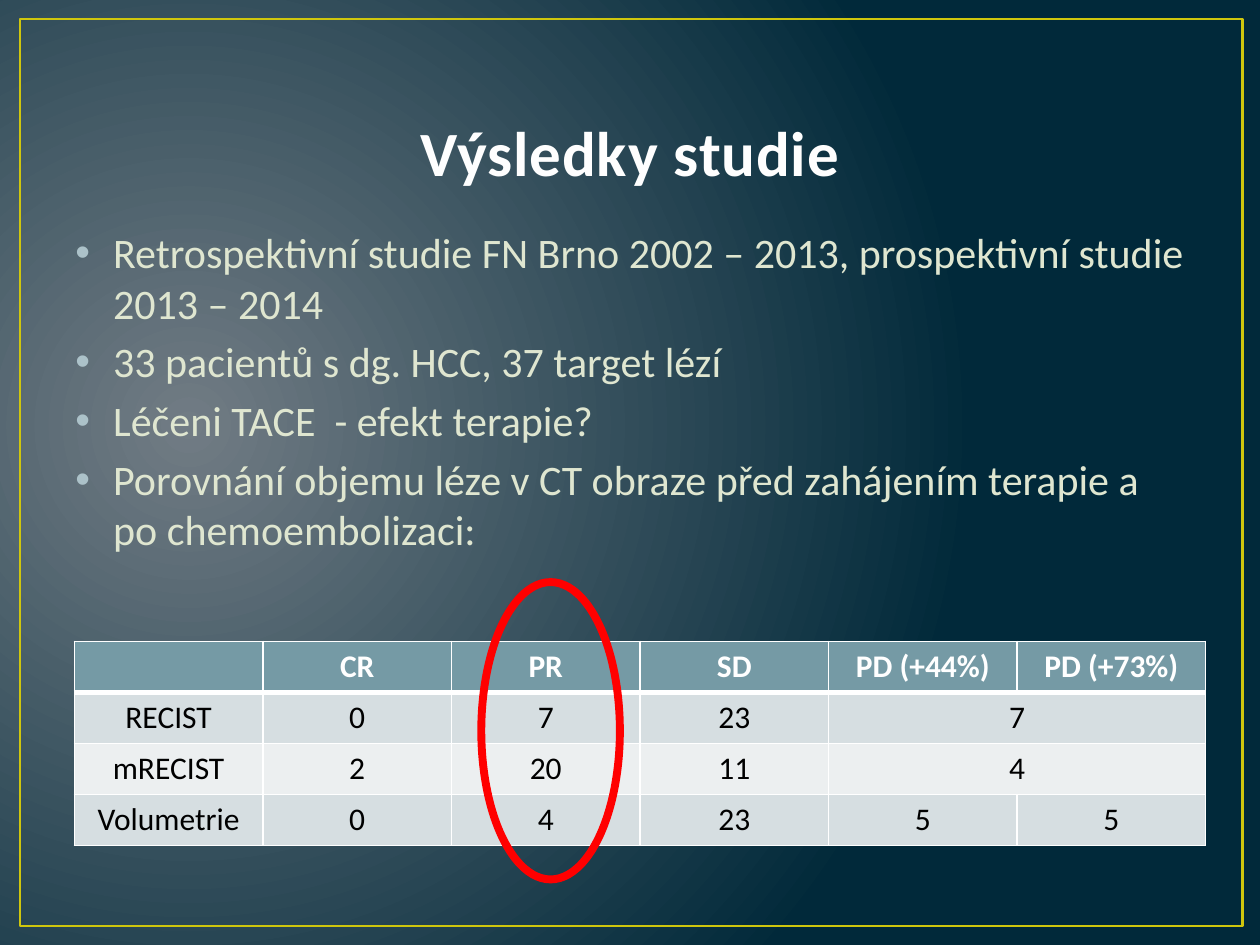
"""Build the study results slide: bullets, response table and a highlighted column."""
import pptx
import pptx.dml.color
import pptx.enum.shapes
import pptx.enum.text
import pptx.oxml
import pptx.oxml.ns
import pptx.util

TITLE = "Výsledky studie"
BULLETS = [
    "Retrospektivní studie FN Brno 2002 – 2013, prospektivní studie 2013 – 2014",
    "33 pacientů s dg. HCC, 37 target lézí",
    "Léčeni TACE  - efekt terapie?",
    "Porovnání objemu léze v CT obraze před zahájením terapie a po chemoembolizaci:",
]
RESPONSES = [
    ["", "CR", "PR", "SD", "PD (+44%)", "PD (+73%)"],
    ["RECIST", "0", "7", "23", "7", None],
    ["mRECIST", "2", "20", "11", "4", None],
    ["Volumetrie", "0", "4", "23", "5", "5"],
]
THEME = {
    "font": "Calibri",
    "glow": "717C84", "night": "01293A", "frame": "CFC60D",
    "title": "FEFEFE", "title_edge": "384F55",
    "body": "DFE6D0", "bullet": "ACC2C9",
    "header": "759AA5", "header_text": "FFFFFF", "cell_text": "000000",
    "bands": ["ECEFF0", "D6DEE1"], "border": "FFFFFF", "highlight": "FF0000",
    "title_size": 36, "body_size": 24, "table_size": 18,
}
WIDTH, HEIGHT = 10, 7.5
MARGIN = 0.05 * WIDTH
FRAME = (0.16, 0.15, 9.7, 7.2)
TITLE_AREA = (MARGIN, 0.3, WIDTH - 2 * MARGIN, 1.25)
BODY_AREA = (MARGIN, 1.75, WIDTH - 2 * MARGIN, 4.95)
TABLE_AREA = (0.59, 5.09, 8.98, 1.62)
HIGHLIGHT = (3.82, 4.62, 1.1, 2.36)
INDENT = 0.3


def inches(area):
    return [pptx.util.Inches(length) for length in area]


def color(name):
    return pptx.dml.color.RGBColor.from_string(THEME[name])


def element(tag, content, attributes=""):
    namespace = pptx.oxml.ns.nsdecls("a")
    return pptx.oxml.parse_xml(f"<a:{tag} {namespace} {attributes}>{content}</a:{tag}>")


def solid(name):
    return f'<a:solidFill><a:srgbClr val="{THEME[name]}"/></a:solidFill>'


def style(span, size, ink, bold=False):
    span.font.name = THEME["font"]
    span.font.size = pptx.util.Pt(THEME[size])
    span.font.color.rgb = color(ink)
    span.font.bold = bold


def paint_background(page):
    fill = page.background.fill
    fill.solid()
    stops = "".join(
        f'<a:gs pos="{place}"><a:srgbClr val="{THEME[name]}"/></a:gs>'
        for place, name in [(0, "glow"), (100000, "night")]
    )
    gradient = element(
        "gradFill",
        f'<a:gsLst>{stops}</a:gsLst><a:path path="circle">'
        '<a:fillToRect l="15000" t="50000" r="85000" b="60000"/></a:path>',
        'rotWithShape="1"',
    )
    plain = next(page.element.iter(pptx.oxml.ns.qn("a:solidFill")))
    plain.getparent().replace(plain, gradient)


def add_outline(page, kind, area, ink, weight):
    shape = page.shapes.add_shape(kind, *inches(area))
    shape.shadow.inherit = False
    shape.fill.background()
    shape.line.color.rgb = color(ink)
    shape.line.width = pptx.util.Pt(weight)


def add_text(page, area):
    box = page.shapes.add_textbox(*inches(area))
    box.text_frame.word_wrap = True
    return box.text_frame


def add_title(page):
    frame = add_text(page, TITLE_AREA)
    frame.vertical_anchor = pptx.enum.text.MSO_ANCHOR.BOTTOM
    frame.text = TITLE
    para = frame.paragraphs[0]
    para.alignment = pptx.enum.text.PP_ALIGN.CENTER
    span = para.runs[0]
    style(span, "title_size", "title", True)
    properties = span.font._element
    properties.set("spc", "50")
    properties.insert(0, element("ln", solid("title_edge"), f'w="{pptx.util.Pt(1.05)}"'))


def add_bullets(page):
    frame = add_text(page, BODY_AREA)
    frame.text = "\n".join(BULLETS)
    for para in frame.paragraphs:
        style(para.runs[0], "body_size", "body")
        properties = para._p.get_or_add_pPr()
        properties.set("marL", str(pptx.util.Inches(INDENT)))
        properties.set("indent", str(-pptx.util.Inches(INDENT)))
        properties.append(element("spcBef", '<a:spcPct val="20000"/>'))
        properties.append(element("buClr", f'<a:srgbClr val="{THEME["bullet"]}"/>'))
        properties.append(element("buFont", "", 'typeface="Arial"'))
        properties.append(element("buChar", "", 'char="•"'))


def add_borders(cell, row):
    weights = {"L": 1, "R": 1, "T": 3 if row == 1 else 1, "B": 3 if row == 0 else 1}
    properties = cell._tc.get_or_add_tcPr()
    for side, weight in weights.items():
        properties.append(element("ln" + side, solid("border"), f'w="{pptx.util.Pt(weight)}"'))


def add_responses(page):
    rows, columns = len(RESPONSES), len(RESPONSES[0])
    table = page.shapes.add_table(rows, columns, *inches(TABLE_AREA)).table
    for row, values in enumerate(RESPONSES):
        for column, value in enumerate(values):
            cell = table.cell(row, column)
            add_borders(cell, row)
            cell.fill.solid()
            band = THEME["header"] if row == 0 else THEME["bands"][row % 2]
            cell.fill.fore_color.rgb = pptx.dml.color.RGBColor.from_string(band)
            if value is None:
                table.cell(row, column - 1).merge(cell)
                continue
            cell.text = value
            para = cell.text_frame.paragraphs[0]
            para.alignment = pptx.enum.text.PP_ALIGN.CENTER
            ink = "header_text" if row == 0 else "cell_text"
            style(para, "table_size", ink, row == 0)
            for span in para.runs:
                style(span, "table_size", ink, row == 0)


def main():
    deck = pptx.Presentation()
    deck.slide_width, deck.slide_height = inches((WIDTH, HEIGHT))
    page = deck.slides.add_slide(deck.slide_layouts[6])
    shapes = pptx.enum.shapes.MSO_SHAPE
    paint_background(page)
    add_outline(page, shapes.RECTANGLE, FRAME, "frame", 1.5)
    add_title(page)
    add_bullets(page)
    add_responses(page)
    add_outline(page, shapes.OVAL, HIGHLIGHT, "highlight", 4.5)
    deck.save("out.pptx")


if __name__ == "__main__":
    main()
